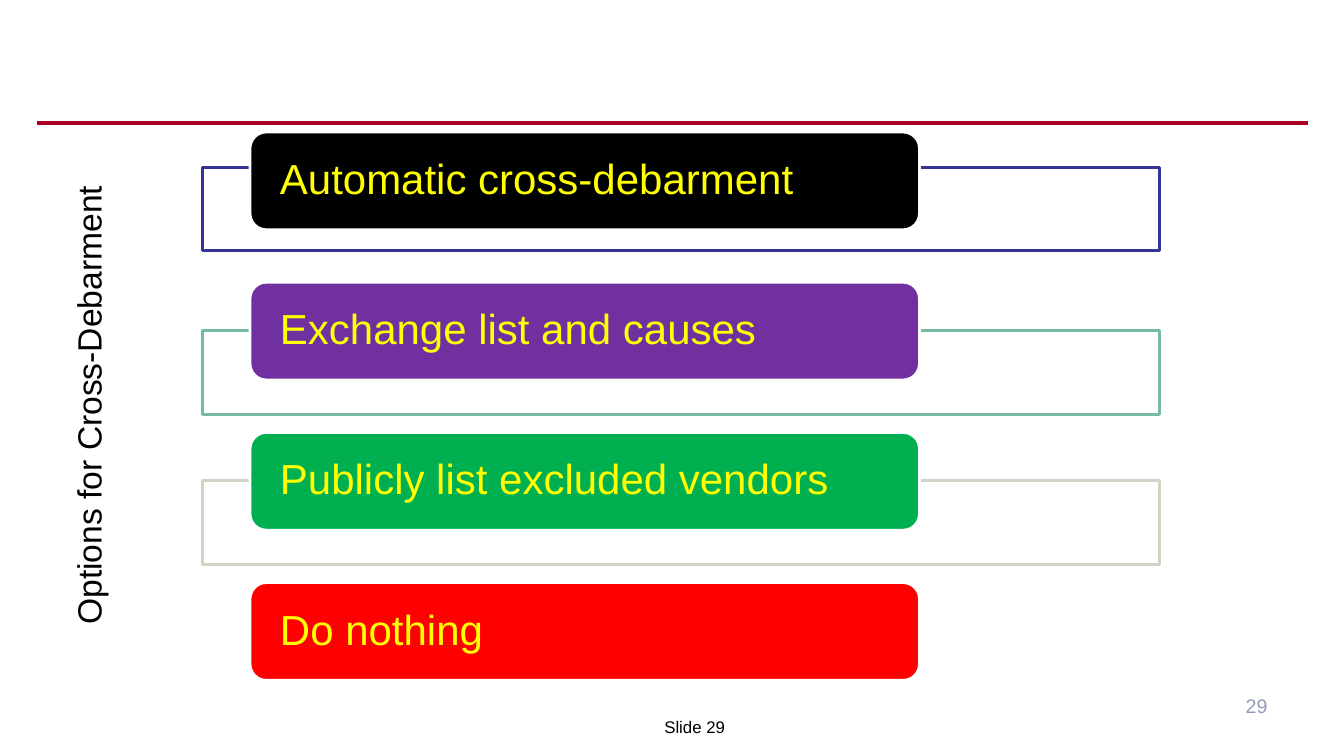
from pptx import Presentation
from pptx.dml.color import RGBColor
from pptx.enum.shapes import MSO_SHAPE as SHAPE
from pptx.enum.text import MSO_ANCHOR as ANCHOR, PP_ALIGN as ALIGN
from pptx.oxml.ns import qn
from pptx.util import Inches, Pt
from lxml.etree import SubElement


def rgb(value):
    return RGBColor.from_string(value)


def write(sp, text, size, color, align=ALIGN.LEFT):
    sp.text_frame.word_wrap = True
    p = sp.text_frame.paragraphs[0]
    p.alignment = align
    r = p.add_run()
    r.text = text
    for name, value in {"name": "Arial", "size": Pt(size)}.items():
        setattr(r.font, name, value)
    r.font.color.rgb = rgb(color)
    return p


prs = Presentation()
prs.slide_width, prs.slide_height = Inches(13.33), Inches(7.5)
s = prs.slides.add_slide(prs.slide_layouts[6])

# Header rule: one empty cell with only a top border
frame = s.shapes.add_table(1, 1, Inches(0.37), Inches(1.22), Inches(12.6), Inches(0.57))
frame.table.first_row = frame.table.horz_banding = False
cell = frame.table.cell(0, 0)
tc_pr = cell._tc.get_or_add_tcPr()
for side in ("lnL", "lnR", "lnT", "lnB"):
    ln = SubElement(tc_pr, qn(f"a:{side}"))
    if side == "lnT":
        ln.set("w", str(Pt(3)))
        fill = SubElement(ln, qn("a:solidFill"))
        SubElement(fill, qn("a:srgbClr"), val="A50021")
    else:
        SubElement(ln, qn("a:noFill"))
cell.fill.background()

# Footer and slide number
for x, y, w, h, text, size, color, align in [
    (4.78, 7.06, 4.22, 0.31, "Slide 29", 12, "000000", ALIGN.CENTER),
    (9.56, 6.83, 3.11, 0.52, "29", 14, "919DB6", ALIGN.RIGHT),
]:
    box = s.shapes.add_textbox(Inches(x), Inches(y), Inches(w), Inches(h))
    write(box, text, size, color, align)

# Options: an outlined bar behind each rounded label
options = [
    ("Automatic cross-debarment", "000000", "333399", 0.35),
    ("Exchange list and causes", "7030A0", "77BBA4", 0.48),
    ("Publicly list excluded vendors", "00B050", "CFD5C4", 0.48),
    ("Do nothing", "FF0000", "FFFFFF", 0.48),
]
for i, (text, label_color, bar_color, bar_drop) in enumerate(options):
    top = 1.31 + 1.49 * i
    bar = s.shapes.add_shape(SHAPE.RECTANGLE, Inches(2.01), Inches(top + bar_drop),
                             Inches(9.49), Inches(0.83))
    label = s.shapes.add_shape(SHAPE.ROUNDED_RECTANGLE, Inches(2.48), Inches(top),
                               Inches(6.64), Inches(0.97))
    for sp, fill, line in [(bar, "FFFFFF", bar_color), (label, label_color, "FFFFFF")]:
        sp.shadow.inherit = False
        sp.fill.solid()
        sp.fill.fore_color.rgb = rgb(fill)
        sp.line.color.rgb = rgb(line)
        sp.line.width = Pt(2)
    bar_fill = bar.fill._xPr.find(qn("a:solidFill"))
    SubElement(bar_fill[0], qn("a:alpha"), val="90000")

    tf = label.text_frame
    for name, value in {"margin_left": Inches(0.25), "margin_right": Inches(0.25),
                        "margin_top": 0, "margin_bottom": 0,
                        "vertical_anchor": ANCHOR.MIDDLE}.items():
        setattr(tf, name, value)
    write(label, text, 30, "FFFF00").line_spacing = 0.9

# Vertical title
title = s.shapes.add_textbox(Inches(-1.62), Inches(3.55), Inches(4.99), Inches(0.5))
title.rotation = 270
write(title, "Options for Cross-Debarment", 24, "000000")

prs.save("out.pptx")
